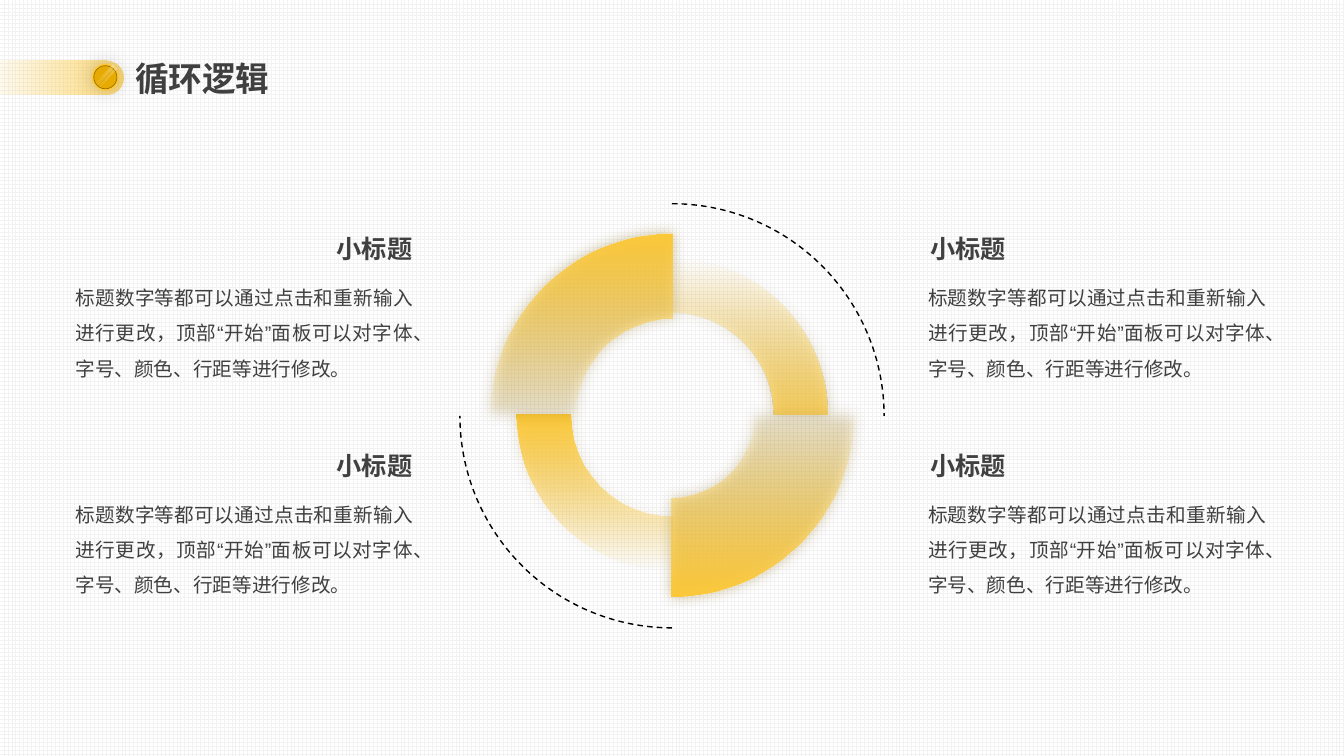
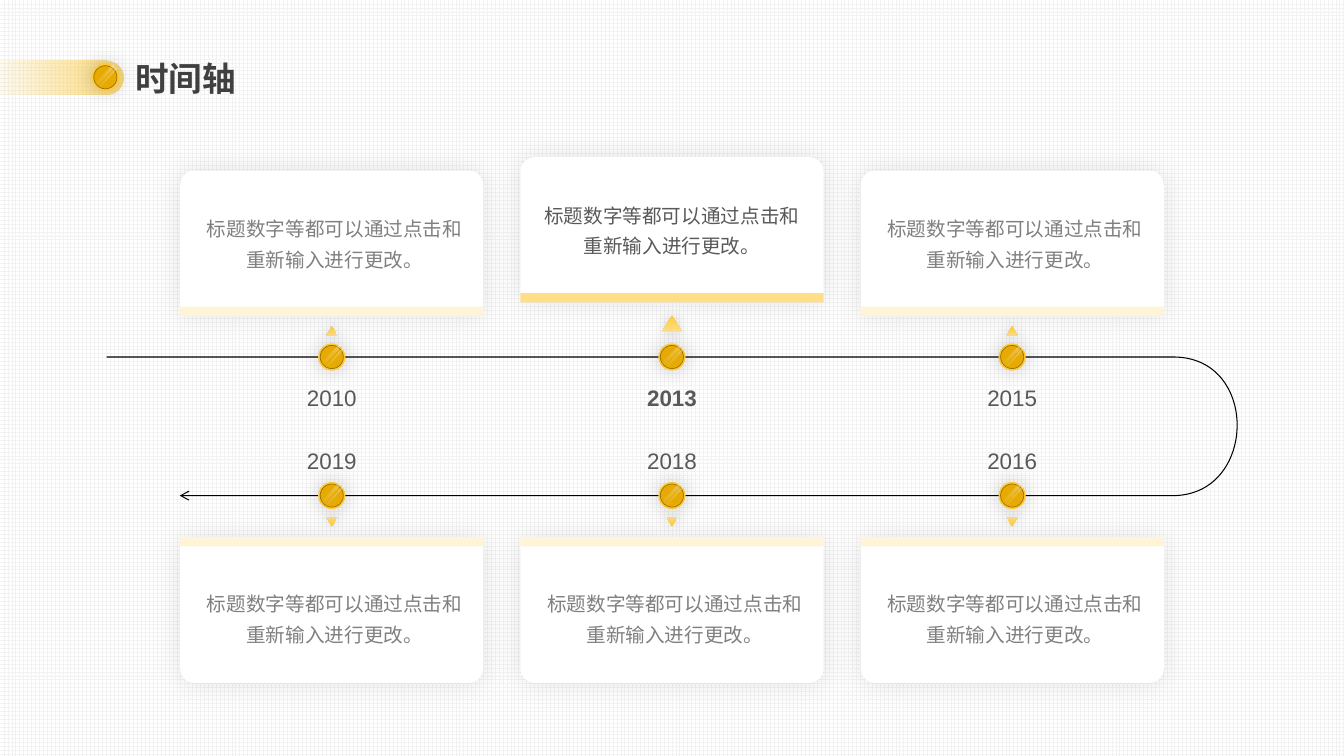
from lxml.etree import SubElement
from pptx import Presentation
from pptx.dml.color import RGBColor
from pptx.enum.dml import MSO_LINE, MSO_PATTERN
from pptx.enum.lang import MSO_LANGUAGE_ID as Language
from pptx.enum.shapes import MSO_SHAPE as Shape
from pptx.enum.text import PP_ALIGN as Align
from pptx.oxml.ns import qn
from pptx.util import Emu, Pt

COLUMNS, ROWS = 160, 90
CELL = 76200
CENTRE = COLUMNS / 2
FONT = "Arial"
GOLD, DEEP_GOLD, BRONZE, BROWN = "FDC939", "E6AA02", "997102", "806000"
PALE_GOLD, CREAM = "FEDF88", "FFF4D7"
WHITE, GRID_GREY, BLACK = "FFFFFF", "F2F2F2", "000000"
DARK, MEDIUM, LIGHT = "404040", "595959", "808080"
BODY = "标题数字等都可以通过点击和重新输入进行更改，顶部“开始”面板可以对字体、字号、颜色、行距等进行修改。"
CARD_BODY = "标题数字等都可以通过点击和重新输入进行更改。"
YEARS_OUT = ("2010", "2013", "2015")
YEARS_BACK = ("2019", "2018", "2016")
FEATURED = "2013"


def colour(value):
    """Turn a hex string into a colour."""
    return RGBColor.from_string(value)


def cells(*lengths):
    """Turn grid lengths into slide lengths."""
    return [Emu(round(length * CELL)) for length in lengths]


def set_alpha(element, percent):
    """Give a colour element its opacity."""
    SubElement(element, qn("a:alpha"), val=str(percent * 1000))


def fill_gradient(shape, stops, angle):
    """Fill a shape with two (position, colour, opacity) stops, angle clockwise."""
    shape.fill.gradient()
    shape.fill.gradient_angle = 360 - angle
    for stop, (position, value, _) in zip(shape.fill.gradient_stops, stops):
        stop.position = position / 100
        stop.color.rgb = colour(value)
    gradient = shape.element.spPr.find(qn("a:gradFill"))
    for element, (_, _, opacity) in zip(gradient.iter(qn("a:srgbClr")), stops):
        set_alpha(element, opacity)


def add_glow(shape, value, opacity, blur):
    """Add a soft centred shadow to a shape."""
    effects = shape.element.spPr.find(qn("a:effectLst"))
    shadow = SubElement(effects, qn("a:outerShdw"), blurRad=str(Pt(blur)),
                        dist="0", dir="0", algn="ctr", rotWithShape="0")
    set_alpha(SubElement(shadow, qn("a:srgbClr"), val=value), opacity)


def set_line(shape, value, width):
    """Outline a shape."""
    shape.line.color.rgb = colour(value)
    shape.line.width = Pt(width)


def draw(shapes, kind, x, y, width, height, fill=None, gradient=None, angle=90,
         line=None, glow=None, adjust=(), flip="", turn=0):
    """Draw a preset shape around the grid point x, y."""
    shape = shapes.add_shape(kind, *cells(x - width / 2, y - height / 2, width, height))
    shape.shadow.inherit = False
    for index, value in enumerate(adjust):
        shape.adjustments[index] = value
    shape.rotation = turn
    for axis in flip:
        shape.element.spPr.find(qn("a:xfrm")).set("flip" + axis, "1")
    if gradient:
        fill_gradient(shape, gradient, angle)
    elif fill:
        shape.fill.solid()
        shape.fill.fore_color.rgb = colour(fill)
    else:
        shape.fill.background()
    if line:
        set_line(shape, *line)
    else:
        shape.line.fill.background()
    if glow:
        add_glow(shape, *glow)
    return shape


def write(page, text, left, top, width, height, size=14, tone=DARK, bold=False,
          align=Align.LEFT, spacing=1.0, wrap=True):
    """Write one paragraph in a text box."""
    box = page.shapes.add_textbox(*cells(left, top, width, height))
    box.text_frame.word_wrap = wrap
    para = box.text_frame.paragraphs[0]
    para.alignment, para.line_spacing = align, spacing
    span = para.add_run()
    span.text = text
    span.font.size, span.font.bold, span.font.name = Pt(size), bold, FONT
    span.font.color.rgb = colour(tone)
    span.font.language_id = Language.SIMPLIFIED_CHINESE
    SubElement(span.font._element, qn("a:ea"), typeface=FONT)


def add_coin(page, x, y):
    """Draw a shiny gold coin."""
    coin = page.shapes.add_group_shape().shapes
    draw(coin, Shape.OVAL, x, y, 3.24, 3.24, GOLD, glow=(BLACK, 20, 15))
    draw(coin, Shape.OVAL, x, y, 2.76, 2.76, DEEP_GOLD, line=(BRONZE, 0.5))
    shine = [(0, WHITE, 0), (100, WHITE, 33)]
    for shift, width in ((0.15, 0.28), (-0.18, 0.48)):
        draw(coin, Shape.PARALLELOGRAM, x + shift, y + shift, width, 3.3,
             gradient=shine, angle=270, adjust=[0.25], turn=41)


def add_page(deck, title):
    """Add a blank page with the gold band, coin and title."""
    page = deck.slides.add_slide(deck.slide_layouts[6])
    draw(page.shapes, Shape.ROUNDED_RECTANGLE, 6.35, 9.25, 16.7, 4.1, adjust=[0.5],
         gradient=[(0, GOLD, 67), (100, GOLD, 0)], angle=180)
    add_coin(page, 12.55, 9.2)
    write(page, title, 14.9, 6.25, 18.6, 6, size=24, bold=True, wrap=False)
    return page


def add_ring(page, x, y):
    """Draw the four-part ring with its two dashed arcs."""
    ring = page.shapes.add_group_shape().shapes
    fade_out = [(0, GOLD, 100), (100, GOLD, 0)]
    segments = (
        (37.1, 0.174, "V", [(0, GOLD, 0), (100, GOLD, 100)]),
        (37.1, 0.174, "H", [(0, GOLD, 0), (69, GOLD, 100)]),
        (43.3, 0.235, "", fade_out),
        (43.3, 0.272, "HV", fade_out),
    )
    for size, thickness, flip, gradient in segments:
        draw(ring, Shape.BLOCK_ARC, x, y, size, size, gradient=gradient, flip=flip,
             adjust=[108, 162, thickness], glow=(BROWN, 40, 10))
    for flip in ("", "HV"):
        arc = draw(ring, Shape.ARC, x, y + 0.1, 50.5, 50.5, line=(BLACK, 1), flip=flip)
        arc.line.dash_style = MSO_LINE.DASH


def build_cycle(deck):
    """Build the cycle page."""
    page = add_page(deck, "循环逻辑")
    add_ring(page, CENTRE, 49.4)
    for body_left, heading_left in ((109.3, 109.6), (7.8, 38.9)):
        for top in (27.2, 53):
            write(page, "小标题", heading_left, top, 11.5, 4.8, size=18, bold=True,
                  wrap=False)
            write(page, BODY, body_left, top + 4.85, 42.6, 13.4,
                  align=Align.JUSTIFY, spacing=1.5)


def add_track(page, top, bottom):
    """Draw the timeline that turns back on itself and ends in an arrow."""
    bend = ((139.9, top), (149.9, top + 0.2), (149.6, bottom - 0.3), (139.9, bottom))
    points = [(12.7, top)]
    steps = 40
    for step in range(steps + 1):
        t = step / steps
        weights = ((1 - t) ** 3, 3 * t * (1 - t) ** 2, 3 * t ** 2 * (1 - t), t ** 3)
        points.append(tuple(sum(weight * point[axis] for weight, point in zip(weights, bend))
                            for axis in (0, 1)))
    points.append((21.4, bottom))
    points = [cells(*point) for point in points]
    builder = page.shapes.build_freeform(*points[0])
    builder.add_line_segments(points[1:], close=False)
    track = builder.convert_to_shape()
    track.shadow.inherit = False
    track.fill.background()
    set_line(track, BLACK, 0.75)
    SubElement(track.element.spPr.find(qn("a:ln")), qn("a:tailEnd"), type="arrow")


def add_stop(page, x, y, year, above):
    """Draw a coin, year, pointer and card at one point of the track."""
    featured = year == FEATURED
    lift = 1.6 if featured else 0
    side = -1 if above else 1
    pointer = (2.3, 1.9) if featured else (1.3, 1.2)
    card = y - 13.6 - lift if above else y + 13.7
    strip = y - 5.45 - lift if above else y + 5.5
    draw(page.shapes, Shape.ROUND_2_SAME_RECTANGLE, x, card, 36.1, 17.2, WHITE,
         adjust=[0.101, 0], flip="" if above else "V", glow=(BLACK, 10, 20))
    draw(page.shapes, Shape.RECTANGLE, x, strip, 36.1, 1.1,
         PALE_GOLD if featured else CREAM)
    draw(page.shapes, Shape.ISOSCELES_TRIANGLE, x, y + side * (4 if featured else 3.1),
         *pointer, gradient=[(0, GOLD, 100), (100, PALE_GOLD, 100)],
         turn=0 if above else 180, glow=(BLACK, 20, 10))
    add_coin(page, x, y)
    write(page, year, x - 4.2, y + (2.6 if above else -6.4), 8.4, 4.4, size=16,
          tone=MEDIUM, bold=featured, align=Align.CENTER)
    write(page, CARD_BODY, x - (16.45 if featured else 16.1),
          y - 18.1 - lift if above else y + 10.1, 32.9, 8.2,
          tone=MEDIUM if featured else LIGHT, align=Align.CENTER, spacing=1.3)


def build_timeline(deck):
    """Build the timeline page."""
    page = add_page(deck, "时间轴")
    top, bottom, pitch = 42.5, 59, 40.5
    add_track(page, top, bottom)
    for row, years, above in ((top, YEARS_OUT, True), (bottom, YEARS_BACK, False)):
        for column, year in enumerate(years):
            add_stop(page, CENTRE + (column - 1) * pitch, row, year, above)


def main():
    """Build and save the deck."""
    deck = Presentation()
    deck.slide_width, deck.slide_height = cells(COLUMNS, ROWS)
    backdrop = deck.slide_master.background.fill
    backdrop.patterned()
    backdrop.pattern = MSO_PATTERN.LARGE_GRID
    backdrop.fore_color.rgb = colour(GRID_GREY)
    backdrop.back_color.rgb = colour(WHITE)
    build_cycle(deck)
    build_timeline(deck)
    deck.save("out.pptx")


if __name__ == "__main__":
    main()
